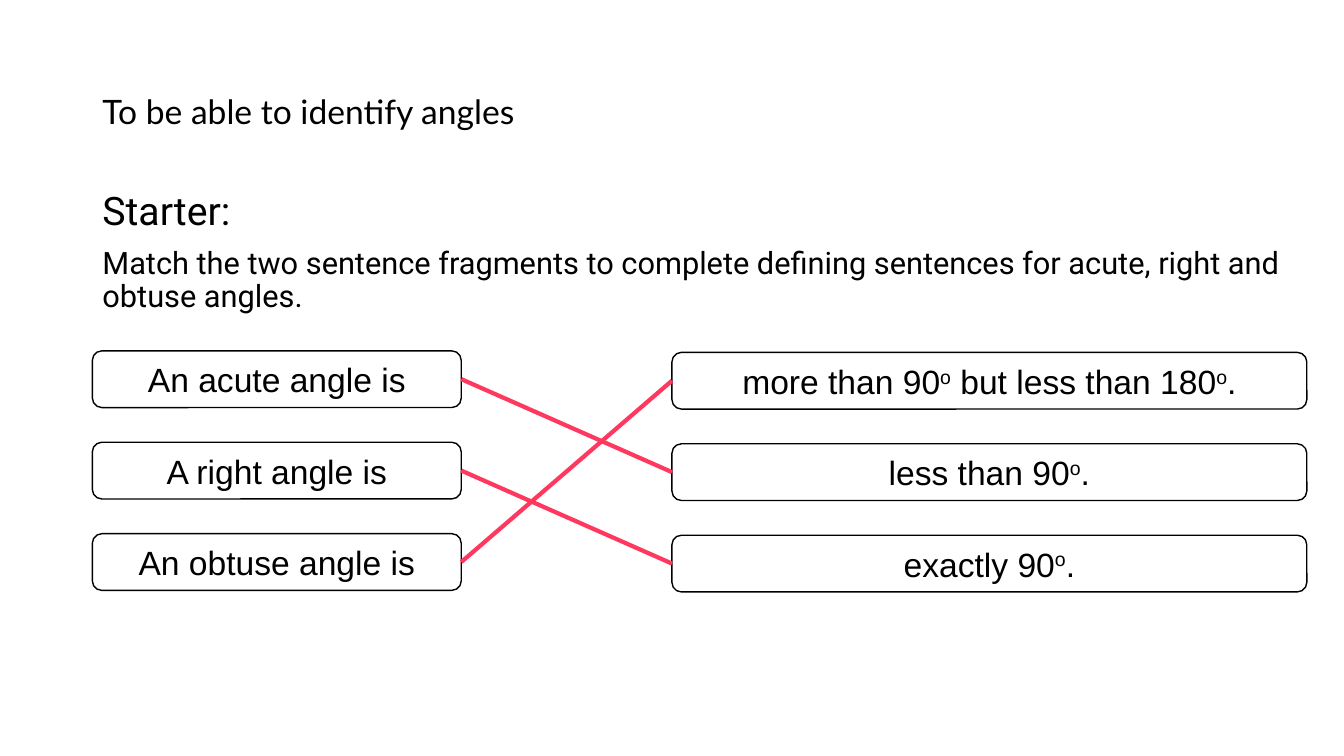
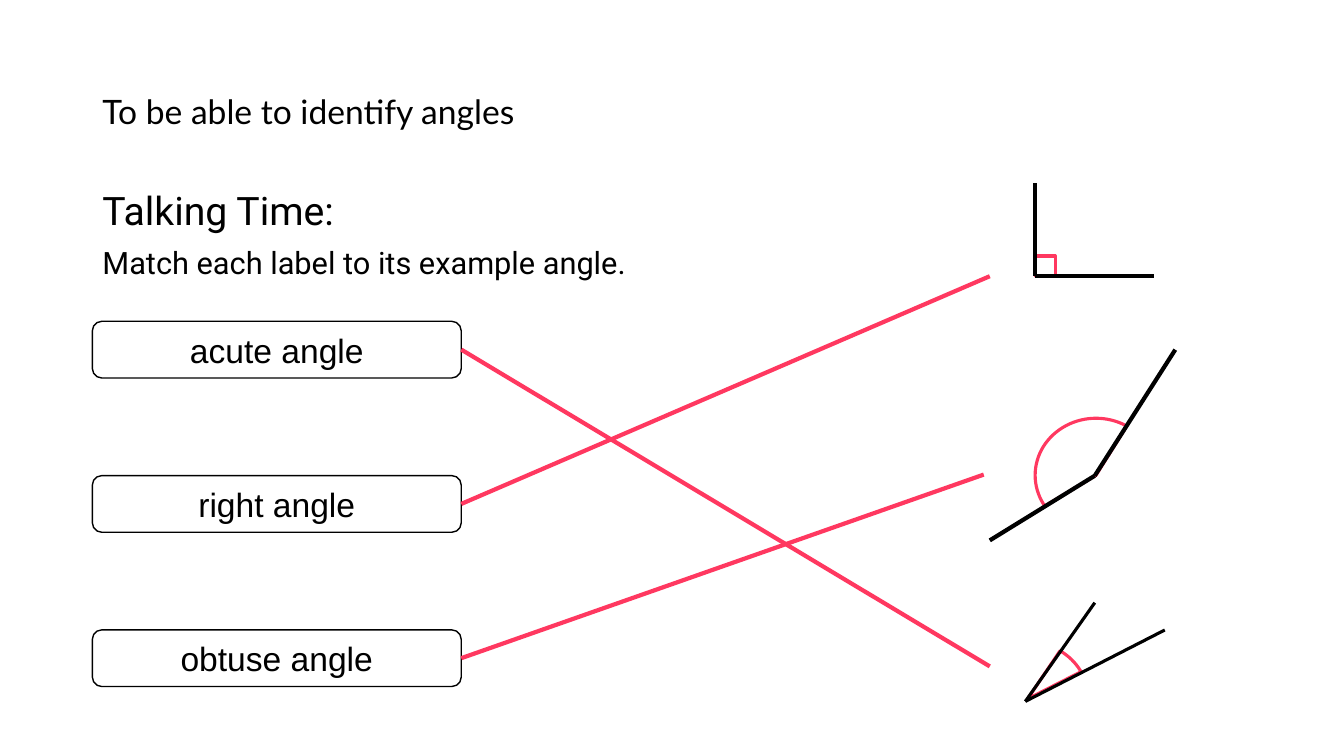
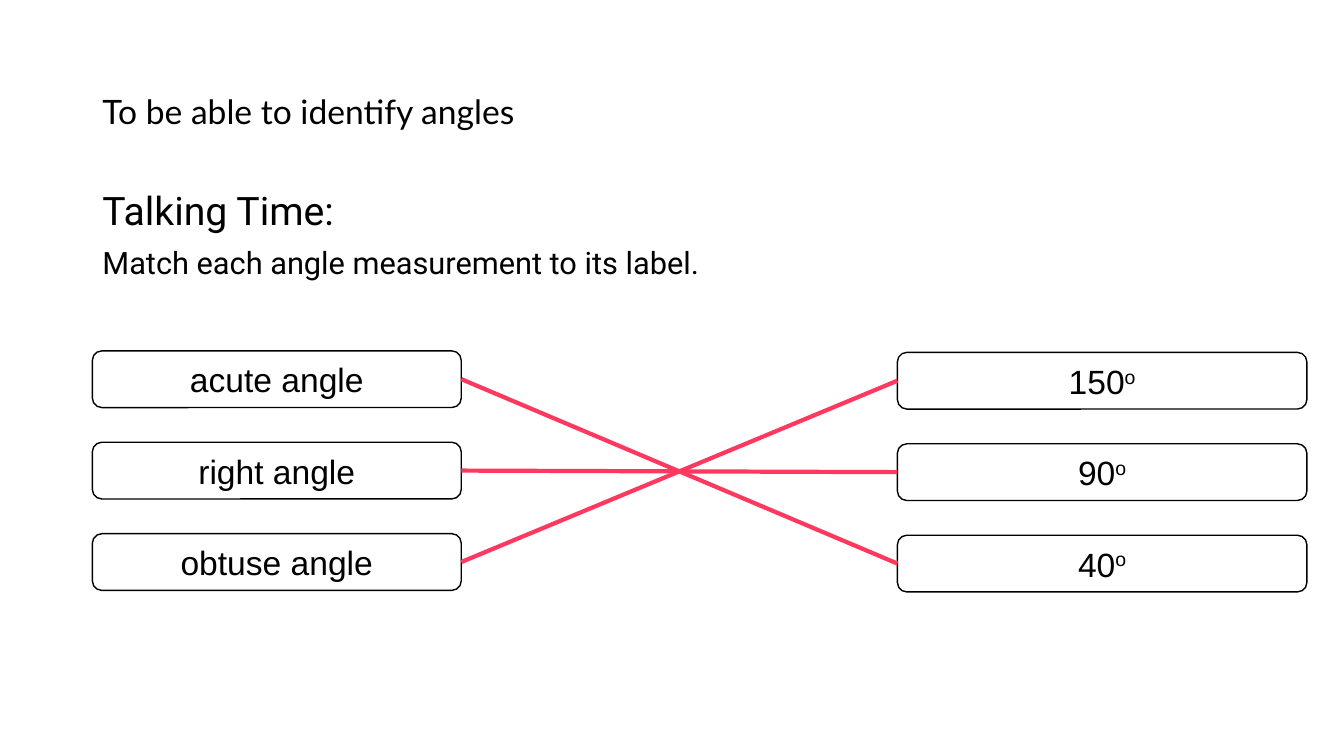
from dataclasses import dataclass

from lxml import etree
from pptx import Presentation
from pptx.dml.color import RGBColor
from pptx.enum.shapes import MSO_CONNECTOR, MSO_SHAPE
from pptx.enum.text import MSO_ANCHOR, MSO_AUTO_SIZE, PP_ALIGN
from pptx.oxml.ns import qn
from pptx.util import Pt

STRAIGHT = MSO_CONNECTOR.STRAIGHT
ROUNDED, PIE, SQUARE = MSO_SHAPE.ROUNDED_RECTANGLE, MSO_SHAPE.PIE, MSO_SHAPE.RECTANGLE
LEFT, CENTER = PP_ALIGN.LEFT, PP_ALIGN.CENTER
MIDDLE, TOP = MSO_ANCHOR.MIDDLE, MSO_ANCHOR.TOP
LEFT_SITE, RIGHT_SITE = 1, 3


@dataclass(frozen=True)
class Theme:
    ink: RGBColor = RGBColor(0x00, 0x00, 0x00)
    paper: RGBColor = RGBColor(0xFF, 0xFF, 0xFF)
    accent: RGBColor = RGBColor(0xFF, 0x38, 0x60)
    title_font: str = "Lato"
    body_font: str = "Roboto"
    label_font: str = "Arial"
    title_size: int = 24
    heading_size: int = 28
    prompt_size: int = 22
    label_size: int = 24
    outline: float = 1
    mark: float = 2.25
    stroke: float = 3


THEME = Theme()
MARGIN = 66
RIGHT_EDGE = 933.5
LABEL_WIDTH, LABEL_HEIGHT = 263.5, 40.5
LABEL_RIGHT = MARGIN + LABEL_WIDTH
ROW_TOP, ROW_PITCH = 250.6, 65.3
ANSWER_TOP = 251.7
WIDE_TOP, WIDE_PITCH = 229.5, 110.2
ANGLE_NAMES = [["acute angle"], ["right angle"], ["obtuse angle"]]


def add_label(slide, left, top, width, pieces):
    """Add a rounded box; every second piece of its text is superscript."""
    label = slide.shapes.add_shape(ROUNDED, Pt(left), Pt(top), Pt(width), Pt(LABEL_HEIGHT))
    label.shadow.inherit = False
    label.fill.solid()
    label.fill.fore_color.rgb = THEME.paper
    label.line.color.rgb = THEME.ink
    label.line.width = Pt(THEME.outline)
    paragraph = label.text_frame.paragraphs[0]
    paragraph.alignment = CENTER
    for index, piece in enumerate(pieces):
        run = paragraph.add_run()
        run.text = piece
        run.font.name = THEME.label_font
        run.font.size = Pt(THEME.label_size)
        run.font.color.rgb = THEME.ink
        if index % 2:
            run.font._element.set("baseline", "30000")
    return label


def add_line(slide, start, end, color, width=THEME.stroke):
    line = slide.shapes.add_connector(STRAIGHT, *(Pt(value) for value in (*start, *end)))
    line.line.color.rgb = color
    line.line.width = Pt(width)
    etree.SubElement(line._element.spPr, qn("a:effectLst"))
    return line


prs = Presentation()
prs.slide_width, prs.slide_height = Pt(960), Pt(540)

# Shared title and body areas
layout = prs.slide_layouts[1]
for placeholder, area in zip(
    layout.placeholders, [(MARGIN, 28.8, 691, 104.4), (MARGIN, 133.2, 867.5, 342.7)]
):
    placeholder.left, placeholder.top, placeholder.width, placeholder.height = map(Pt, area)

# Heading, prompt, left labels, top and pitch of their rows, left edge of the answers,
# answers, and for each label the row of its answer
exercises = [
    ("Starter:",
     "Match the two sentence fragments to complete defining sentences "
     "for acute, right and obtuse angles.",
     [["An acute angle is"], ["A right angle is"], ["An obtuse angle is"]],
     ROW_TOP, ROW_PITCH, 480,
     [["more than 90", "o", " but less than 180", "o", "."],
      ["less than 90", "o", "."],
      ["exactly 90", "o", "."]],
     [1, 2, 0]),
    ("Talking Time:", "Match each label to its example angle.",
     ANGLE_NAMES, WIDE_TOP, WIDE_PITCH, None, [], []),
    ("Talking Time:", "Match each angle measurement to its label.",
     ANGLE_NAMES, ROW_TOP, ROW_PITCH, 641,
     [["150", "o"], ["90", "o"], ["40", "o"]],
     [2, 1, 0]),
]

for heading, prompt, names, top, pitch, answer_left, answers, matches in exercises:
    slide = prs.slides.add_slide(layout)
    title, body = slide.placeholders
    title.text_frame.vertical_anchor = MIDDLE
    body.text_frame.vertical_anchor = TOP
    body.text_frame.add_paragraph()
    for frame in (title.text_frame, body.text_frame):
        frame.word_wrap = True
        frame.auto_size = MSO_AUTO_SIZE.NONE

    heading_line, prompt_line = body.text_frame.paragraphs
    for paragraph, text, font, size, space in [
        (title.text_frame.paragraphs[0], "To be able to identify angles",
         THEME.title_font, THEME.title_size, 0),
        (heading_line, heading, THEME.body_font, THEME.heading_size, 0),
        (prompt_line, prompt, THEME.body_font, THEME.prompt_size, 10),
    ]:
        paragraph.alignment = LEFT
        paragraph.line_spacing = 0.9
        paragraph.space_before = Pt(space)
        properties = paragraph._p.get_or_add_pPr()
        properties.set("marL", "0")
        properties.set("indent", "0")
        etree.SubElement(properties, qn("a:buNone"))
        run = paragraph.add_run()
        run.text = text
        run.font.name = font
        run.font.size = Pt(size)
        run.font.color.rgb = THEME.ink

    name_labels = [
        add_label(slide, MARGIN, top + row * pitch, LABEL_WIDTH, pieces)
        for row, pieces in enumerate(names)
    ]
    answer_labels = [
        add_label(slide, answer_left, ANSWER_TOP + row * pitch, RIGHT_EDGE - answer_left, pieces)
        for row, pieces in enumerate(answers)
    ]
    for name_label, match in zip(name_labels, matches):
        matching_line = add_line(slide, (0, 0), (0, 0), THEME.accent)
        matching_line.begin_connect(name_label, RIGHT_SITE)
        matching_line.end_connect(answer_labels[match], LEFT_SITE)

# Example angles on the second slide: mark, its box, its start and end in degrees,
# then the vertex, the ends of both arms and their width
slide = prs.slides[1]
example_angles = [
    (PIE, (690.5, 458.6, 87, 81.4), (304, 333),
     (732.4, 501), [(832, 450), (782, 430.5)], THEME.mark),
    (PIE, (739.4, 298.8, 87, 81.4), (149, 302),
     (782, 339.8), [(707, 386), (839.5, 249.8)], THEME.stroke),
    (SQUARE, (739.4, 182.9, 14.4, 14.4), (),
     (739.4, 197.3), [(824.4, 197.3), (739.4, 131)], THEME.stroke),
]
for kind, area, sweep, vertex, arm_ends, width in example_angles:
    angle_mark = slide.shapes.add_shape(kind, *map(Pt, area))
    angle_mark.shadow.inherit = False
    angle_mark.fill.background()
    angle_mark.line.color.rgb = THEME.accent
    angle_mark.line.width = Pt(THEME.mark)
    for index, degrees in enumerate(sweep):
        angle_mark.adjustments[index] = degrees * 0.6
    for arm_end in arm_ends:
        add_line(slide, vertex, arm_end, THEME.ink, width)

for row, target in enumerate([(707, 476), (707, 197.3), (702.7, 339)]):
    start = (LABEL_RIGHT, WIDE_TOP + row * WIDE_PITCH + LABEL_HEIGHT / 2)
    add_line(slide, start, target, THEME.accent)

prs.save("out.pptx")
